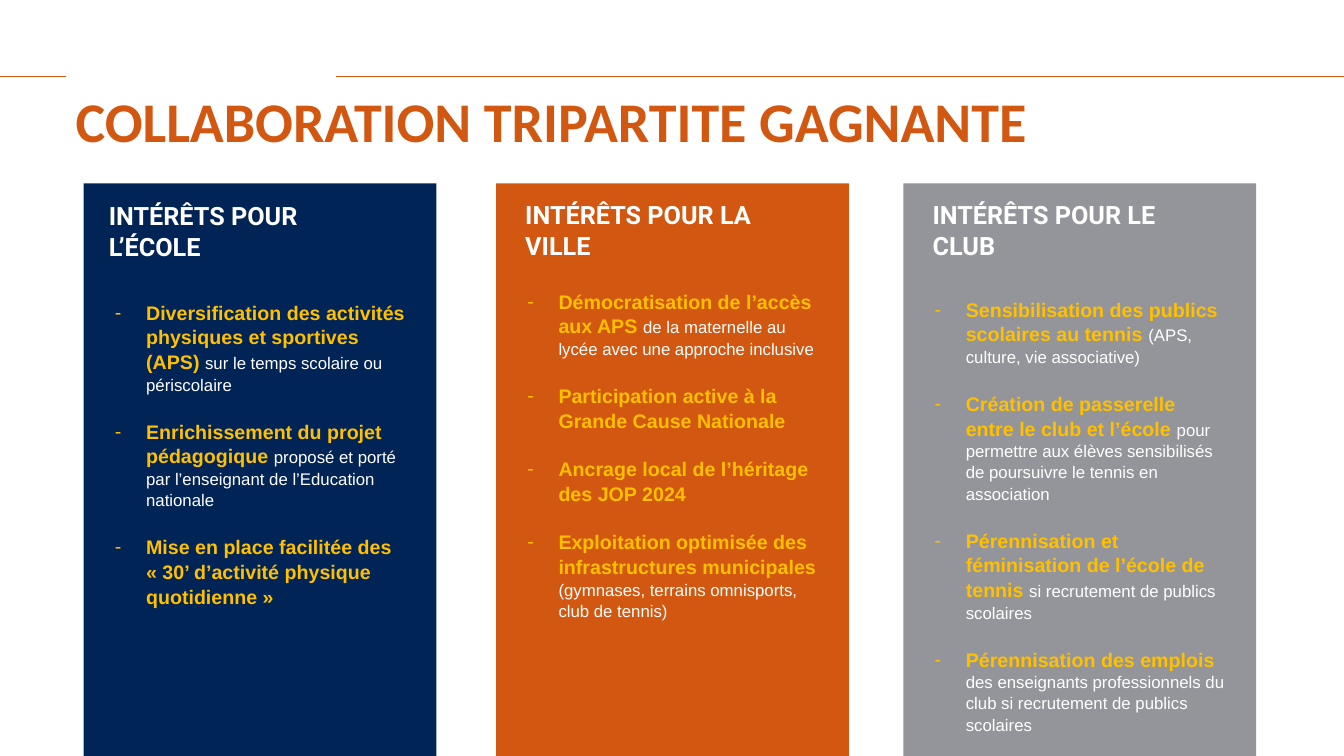
from lxml import etree
from pptx import Presentation
from pptx.dml.color import RGBColor
from pptx.enum.shapes import MSO_CONNECTOR, MSO_SHAPE
from pptx.enum.text import MSO_ANCHOR, PP_ALIGN
from pptx.oxml.ns import qn
from pptx.util import Inches, Pt

COLORS = {
    "navy": "002455",
    "orange": "D25710",
    "gray": "93959A",
    "gold": "FFC000",
    "white": "FFFFFF",
}
TITLE = "COLLABORATION TRIPARTITE GAGNANTE"
RULES = [(0, 0.65), (3.33, 13.33)]

# Each benefit is (bold gold part, plain white part).
COLUMNS = [
    {
        "heading": "INTÉRÊTS POUR L’ÉCOLE",
        "fill": "navy",
        "left": 0.83,
        "heading_left": 1.08,
        "heading_top": 1.98,
        "text_top": 2.97,
        "benefits": [
            ("Diversification des activités physiques et sportives (APS) ",
             "sur le temps scolaire ou périscolaire"),
            ("Enrichissement du projet pédagogique ",
             "proposé et porté par l’enseignant de l’Education nationale"),
            ("Mise en place facilitée des « 30’ d’activité physique quotidienne »", ""),
        ],
    },
    {
        "heading": "INTÉRÊTS POUR LA VILLE",
        "fill": "orange",
        "left": 4.92,
        "heading_left": 5.21,
        "heading_top": 1.97,
        "text_top": 2.86,
        "benefits": [
            ("Démocratisation de l’accès aux APS ",
             "de la maternelle au lycée avec une approche inclusive"),
            ("Participation active à la Grande Cause Nationale", ""),
            ("Ancrage local de l’héritage des JOP 2024", ""),
            ("Exploitation optimisée des infrastructures municipales ",
             "(gymnases, terrains omnisports, club de tennis)"),
        ],
    },
    {
        "heading": "INTÉRÊTS POUR LE CLUB",
        "fill": "gray",
        "left": 8.96,
        "heading_left": 9.25,
        "heading_top": 1.97,
        "text_top": 2.94,
        "benefits": [
            ("Sensibilisation des publics scolaires au tennis ",
             "(APS, culture, vie associative)"),
            ("Création de passerelle entre le club et l’école ",
             "pour permettre aux élèves sensibilisés de poursuivre le tennis en association"),
            ("Pérennisation et féminisation de l’école de tennis ",
             "si recrutement de publics scolaires"),
            ("Pérennisation des emplois ",
             "des enseignants professionnels du club si recrutement de publics scolaires"),
        ],
    },
]

SLIDE_WIDTH, SLIDE_HEIGHT = 13.33, 7.5
RULE_TOP = 0.76
PANEL_TOP, PANEL_WIDTH = 1.82, 3.5
PADDING = INDENT = 0.31
LINE_SPACING = 1.05
BENEFIT_GAP = 17


def rgb(name):
    return RGBColor.from_string(COLORS[name])


def add_span(para, text, font, size, color, bold):
    span = para.add_run()
    span.text = text
    span.font.name = font
    span.font.size = Pt(size)
    span.font.bold = bold
    span.font.color.rgb = rgb(color)


def set_margins(frame, side, top):
    frame.margin_left = frame.margin_right = frame.margin_bottom = Inches(side)
    frame.margin_top = Inches(top)
    frame.word_wrap = True


def add_label(page, text, place, font, size, color, anchor, spacing=1.0):
    box = page.shapes.add_textbox(*map(Inches, place))
    frame = box.text_frame
    set_margins(frame, 0, 0)
    frame.vertical_anchor = anchor
    para = frame.paragraphs[0]
    para.line_spacing = spacing
    add_span(para, text, font, size, color, True)


def add_rule(page, start, end):
    rule = page.shapes.add_connector(
        MSO_CONNECTOR.STRAIGHT,
        Inches(start), Inches(RULE_TOP), Inches(end), Inches(RULE_TOP))
    rule.line.color.rgb = rgb("orange")
    rule.line.width = Pt(1)
    etree.SubElement(rule._element.spPr, qn("a:effectLst"))


def add_dash(para):
    """Give the paragraph a gold hanging dash."""
    props = para._p.get_or_add_pPr()
    props.set("marL", str(Inches(INDENT)))
    props.set("indent", str(-Inches(INDENT)))
    color = etree.SubElement(props, qn("a:buClr"))
    etree.SubElement(color, qn("a:srgbClr"), val=COLORS["gold"])
    etree.SubElement(props, qn("a:buFont"), typeface="Arial")
    etree.SubElement(props, qn("a:buChar"), char="-")


def add_panel(page, column):
    panel = page.shapes.add_shape(
        MSO_SHAPE.RECTANGLE, Inches(column["left"]), Inches(PANEL_TOP),
        Inches(PANEL_WIDTH), Inches(SLIDE_HEIGHT - PANEL_TOP))
    panel.shadow.inherit = False
    panel.fill.solid()
    panel.fill.fore_color.rgb = rgb(column["fill"])
    panel.line.fill.background()

    frame = panel.text_frame
    set_margins(frame, PADDING, column["text_top"] - PANEL_TOP)
    frame.vertical_anchor = MSO_ANCHOR.TOP
    for index, (benefit, detail) in enumerate(column["benefits"]):
        para = frame.add_paragraph() if index else frame.paragraphs[0]
        add_dash(para)
        para.alignment = PP_ALIGN.LEFT
        para.line_spacing = LINE_SPACING
        if index:
            para.space_before = Pt(BENEFIT_GAP)
        add_span(para, benefit, "Arial", 14, "gold", True)
        if detail:
            add_span(para, detail, "Arial", 12, "white", False)


def main():
    deck = Presentation()
    deck.slide_width = Inches(SLIDE_WIDTH)
    deck.slide_height = Inches(SLIDE_HEIGHT)
    page = deck.slides.add_slide(deck.slide_layouts[6])

    for start, end in RULES:
        add_rule(page, start, end)
    add_label(page, TITLE, (0.75, 0.83, 12.5, 0.67), "Calibri", 40, "orange",
              MSO_ANCHOR.TOP, LINE_SPACING)
    for column in COLUMNS:
        add_panel(page, column)
        place = (column["heading_left"], column["heading_top"], 2.83, 0.61)
        add_label(page, column["heading"], place, "Roboto", 18, "white",
                  MSO_ANCHOR.BOTTOM)
    deck.save("out.pptx")


if __name__ == "__main__":
    main()
